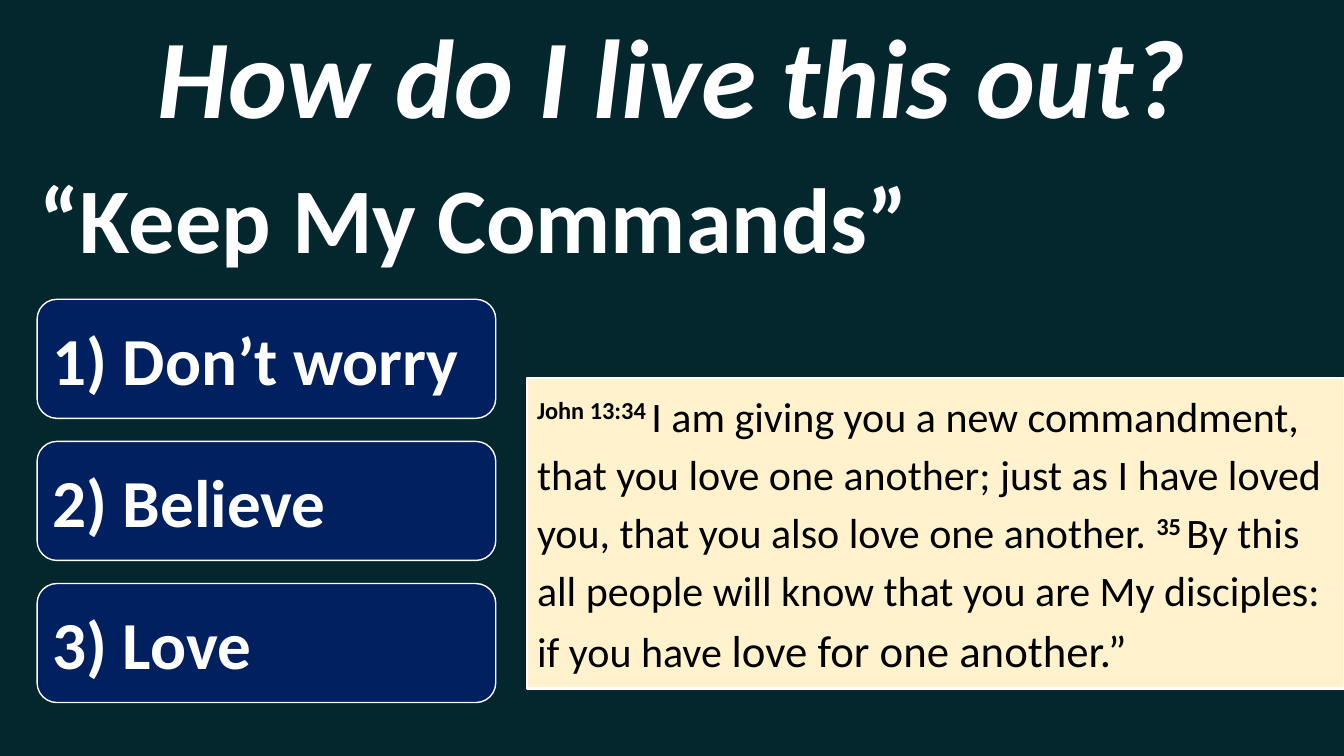
from pptx import Presentation
from pptx.dml.color import RGBColor
from pptx.enum.shapes import MSO_SHAPE as SHAPE
from pptx.enum.text import MSO_ANCHOR as ANCHOR, MSO_AUTO_SIZE as AUTOSIZE, PP_ALIGN as ALIGN
from pptx.util import Pt

# Content
TITLE = "How do I live this out?"
SUBTITLE = "“Keep My Commands” "
COMMANDS = ["Don’t worry", "Believe", "Love"]
VERSE = [  # text, size, superscript verse number
    ("John 13:34 ", 30, True),
    ("I am giving you a new commandment, that you love one another; "
     "just as I have loved you, that you also love one another. ", 30, False),
    ("35 ", 30, True),
    ("By this all people will know that you are My disciples: if you have ", 30, False),
    ("love for one another.”", 32, False),
]

# Layout, in points
W, H = 960, 540
ROW_H = 85
TITLE_BOX = (0, 10, W, ROW_H)
SUBTITLE_BOX = (13, 112.3, 666, ROW_H)
CARD_X, CARD_Y, CARD_W, CARD_STEP = 26.5, 213.8, 327.6, 101.5
VERSE_BOX = (376.5, 270, W - 376.5, 221.8)
COLORS = {"back": "03272D", "card": "002060", "verse": "FFF2CC",
          "light": "FFFFFF", "dark": "000000"}


def color(name):
    return RGBColor.from_string(COLORS[name])


def add_run(p, text, ink, **font):
    r = p.add_run()
    r.text = text
    r.font.color.rgb = color(ink)
    for key, value in {"name": "Calibri", **font}.items():
        setattr(r.font, key, value)
    return r


def set_frame(s, anchor, align):
    tf = s.text_frame
    for key, value in {"word_wrap": True, "auto_size": AUTOSIZE.NONE,
                       "vertical_anchor": anchor}.items():
        setattr(tf, key, value)
    p = tf.paragraphs[0]
    p.alignment = align
    return p


def add_panel(shape, box, fill, line_width):
    s = slide.shapes.add_shape(shape, *map(Pt, box))
    s.shadow.inherit = False
    s.fill.solid()
    s.fill.fore_color.rgb = color(fill)
    s.line.color.rgb = color("light")
    s.line.width = Pt(line_width)
    return s


prs = Presentation()
prs.slide_width, prs.slide_height = Pt(W), Pt(H)
slide = prs.slides.add_slide(prs.slide_layouts[5])
slide.background.fill.solid()
slide.background.fill.fore_color.rgb = color("back")

# Title and subtitle
title = slide.shapes.title
title.left, title.top, title.width, title.height = map(Pt, TITLE_BOX)
p = set_frame(title, ANCHOR.MIDDLE, ALIGN.CENTER)
add_run(p, TITLE, "light", size=Pt(80), bold=True, italic=True)

subtitle = slide.shapes.add_textbox(*map(Pt, SUBTITLE_BOX))
p = set_frame(subtitle, ANCHOR.MIDDLE, ALIGN.CENTER)
add_run(p, SUBTITLE, "light", size=Pt(66), bold=True)

# Numbered command cards
for i, command in enumerate(COMMANDS):
    box = (CARD_X, CARD_Y + i * CARD_STEP, CARD_W, ROW_H)
    card = add_panel(SHAPE.ROUNDED_RECTANGLE, box, "card", 1)
    p = set_frame(card, ANCHOR.MIDDLE, ALIGN.LEFT)
    add_run(p, f"{i + 1}) {command}", "light", size=Pt(48), bold=True)

# Bible verse
verse = add_panel(SHAPE.RECTANGLE, VERSE_BOX, "verse", 1.5)
p = set_frame(verse, ANCHOR.TOP, ALIGN.LEFT)
p.line_spacing, p.space_after = 1.15, Pt(8)
for text, size, raised in VERSE:
    r = add_run(p, text, "dark", size=Pt(size), bold=raised)
    if raised:
        r.font._element.set("baseline", "30000")

prs.save("out.pptx")
